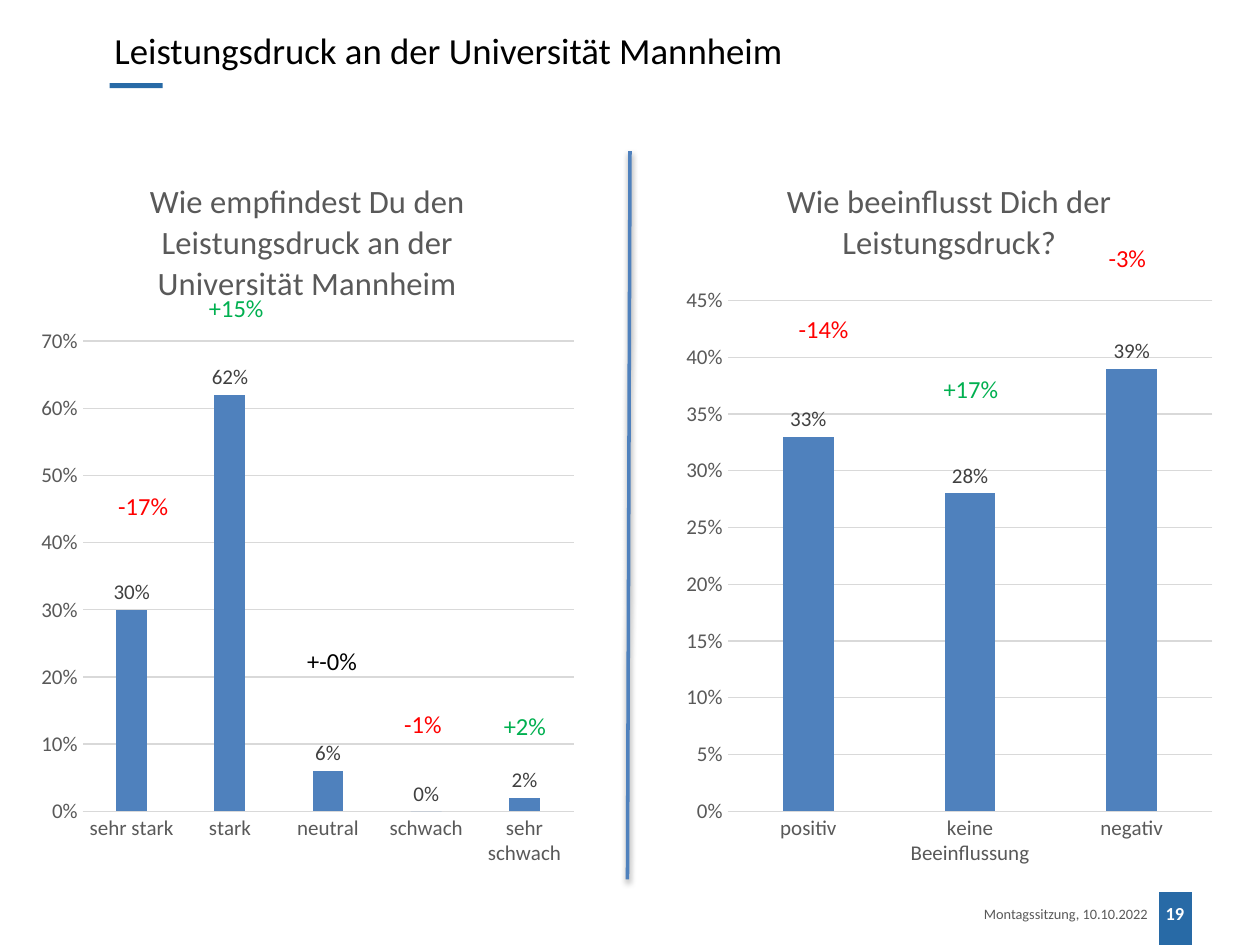
from typing import NamedTuple

from lxml.etree import SubElement
from pptx import Presentation
from pptx.chart.data import CategoryChartData as ChartData
from pptx.dml.color import RGBColor
from pptx.enum.chart import XL_CHART_TYPE as Kind
from pptx.enum.chart import XL_LABEL_POSITION as Spot
from pptx.enum.chart import XL_TICK_MARK as Tick
from pptx.enum.shapes import MSO_CONNECTOR as Conn
from pptx.enum.shapes import MSO_SHAPE as Shape
from pptx.enum.text import MSO_ANCHOR as Anchor
from pptx.enum.text import PP_ALIGN as Align
from pptx.oxml import parse_xml
from pptx.oxml.ns import nsdecls, qn
from pptx.util import Inches, Pt

FONT = "Calibri"
COLORS = {
    "blue": "286AA6", "bar": "4F81BD", "grid": "D9D9D9", "gray": "595959",
    "label": "404040", "black": "000000", "white": "FFFFFF",
    "down": "FF0000", "up": "00B050",
}
# The slide is a grid of 100 columns by 75 rows
COLS, ROWS = 100, 75
CELL = Inches(0.1)


class Box(NamedTuple):
    col: float
    row: float
    wide: float
    high: float


class Text(NamedTuple):
    text: str
    box: Box
    size: float
    color: str = "black"
    align: Align = Align.LEFT
    anchor: Anchor = Anchor.TOP
    inset: tuple = (0.1, 0.05)
    bold: bool = False
    wrap: bool = True


class Poll(NamedTuple):
    title: str
    box: Box
    votes: dict


class Change(NamedTuple):
    text: str
    col: float
    row: float
    color: str


POLLS = [
    Poll("Wie empfindest Du den Leistungsdruck an der Universität Mannheim",
         Box(2.4, 12, 44, 57.9),
         {"sehr stark": 0.3, "stark": 0.62, "neutral": 0.06,
          "schwach": 0, "sehr schwach": 0.02}),
    Poll("Wie beeinflusst Dich der Leistungsdruck?",
         Box(53.6, 12, 43.5, 57.9),
         {"positiv": 0.33, "keine Beeinflussung": 0.28, "negativ": 0.39}),
]
CHANGES = [
    Change("-17%", 8.4, 38.5, "down"),
    Change("+15%", 15.6, 22.8, "up"),
    Change("+-0%", 23.4, 50.8, "black"),
    Change("-1%", 31.1, 55.8, "down"),
    Change("+2%", 39, 55.9, "up"),
    Change("-14%", 62.4, 24.4, "down"),
    Change("+17%", 73.9, 29.2, "up"),
    Change("-3%", 87, 18.8, "down"),
]


def rgb(name: str) -> RGBColor:
    return RGBColor.from_string(COLORS[name])


def place(*cells: float) -> list:
    return [round(n * CELL) for n in cells]


def style(font, size: float, color: str, bold: bool = False) -> None:
    font.name, font.size, font.bold = FONT, Pt(size), bold
    font.color.rgb = rgb(color)


def add_text(slide, item: Text) -> None:
    frame = slide.shapes.add_textbox(*place(*item.box)).text_frame
    frame.word_wrap = item.wrap
    frame.vertical_anchor = item.anchor
    side, edge = map(Inches, item.inset)
    frame.margin_left = frame.margin_right = side
    frame.margin_top = frame.margin_bottom = edge
    para = frame.paragraphs[0]
    para.text, para.alignment = item.text, item.align
    style(para.font, item.size, item.color, item.bold)


def add_bar(slide, box: Box) -> None:
    bar = slide.shapes.add_shape(Shape.RECTANGLE, *place(*box))
    bar.shadow.inherit = False
    bar.fill.solid()
    bar.fill.fore_color.rgb = rgb("blue")
    bar.line.fill.background()


def add_rule(slide, *ends: float) -> None:
    rule = slide.shapes.add_connector(Conn.STRAIGHT, *place(*ends))
    rule.line.color.rgb = rgb("bar")
    rule.line.width = Pt(2)
    # Soft shadow below the line
    rule._element.spPr.append(parse_xml(
        f'<a:effectLst {nsdecls("a")}>'
        f'<a:outerShdw blurRad="{Pt(3.1)}" dist="{Pt(1.6)}" dir="5400000" '
        f'rotWithShape="0"><a:srgbClr val="{COLORS["black"]}">'
        '<a:alpha val="38000"/></a:srgbClr></a:outerShdw></a:effectLst>'))


def add_poll(slide, poll: Poll) -> None:
    data = ChartData(number_format="0%")
    data.categories = list(poll.votes)
    data.add_series(poll.title, list(poll.votes.values()))
    chart = slide.shapes.add_chart(
        Kind.COLUMN_CLUSTERED, *place(*poll.box), data).chart
    style(chart.font, 10, "black")
    chart.has_legend = False

    # Title
    chart.has_title = True
    frame = chart.chart_title.text_frame
    frame.text = poll.title
    style(frame.paragraphs[0].font, 18.6, "gray")
    chart.chart_title.include_in_layout = False

    # Axes
    cats, vals = chart.category_axis, chart.value_axis
    for axis in (cats, vals):
        axis.major_tick_mark = axis.minor_tick_mark = Tick.NONE
        style(axis.tick_labels.font, 12, "gray")
    vals.tick_labels.number_format = "0%"
    vals.tick_labels.number_format_is_linked = False
    vals.format.line.fill.background()
    for line in (cats.format.line, vals.major_gridlines.format.line):
        line.color.rgb = rgb("grid")
        line.width = Pt(0.75)

    # Columns and their labels
    plot = chart.plots[0]
    plot.gap_width, plot.overlap = 219, -27
    plot.vary_by_categories = False
    row = plot.series[0]
    row.format.fill.solid()
    row.format.fill.fore_color.rgb = rgb("bar")
    tags = row.data_labels
    tags.show_value = True
    tags.position = Spot.OUTSIDE_END
    tags.number_format, tags.number_format_is_linked = "0%", False
    style(tags.font, 12, "label")


def main() -> None:
    deck = Presentation()
    deck.slide_width, deck.slide_height = place(COLS, ROWS)
    slide = deck.slides.add_slide(deck.slide_layouts[6])

    # Footer, title mark and divider
    small = {"anchor": Anchor.MIDDLE, "inset": (0.07, 0.04)}
    add_bar(slide, Box(92, 70.8, 2.6, 4.2))
    add_text(slide, Text("19", Box(90.3, 70.5, 5.9, 4), 10.5, "white",
                         Align.CENTER, bold=True, **small))
    add_text(slide, Text("Montagssitzung, 10.10.2022",
                         Box(59.5, 70.5, 32.3, 4), 8.2, "gray",
                         Align.RIGHT, **small))
    add_bar(slide, Box(8.7, 6.6, 4.2, 0.4))
    add_rule(slide, 50, 12, 49.8, 69.8)

    # Charts, title and changes since the last poll
    for poll in POLLS:
        add_poll(slide, poll)
    add_text(slide, Text("Leistungsdruck an der Universität Mannheim",
                         Box(8.1, 1.7, 59.2, 4.5), 21))
    for change in CHANGES:
        add_text(slide, Text(change.text,
                             Box(change.col, change.row, 7.7, 3.4),
                             14, change.color))
    deck.save("out.pptx")


if __name__ == "__main__":
    main()
